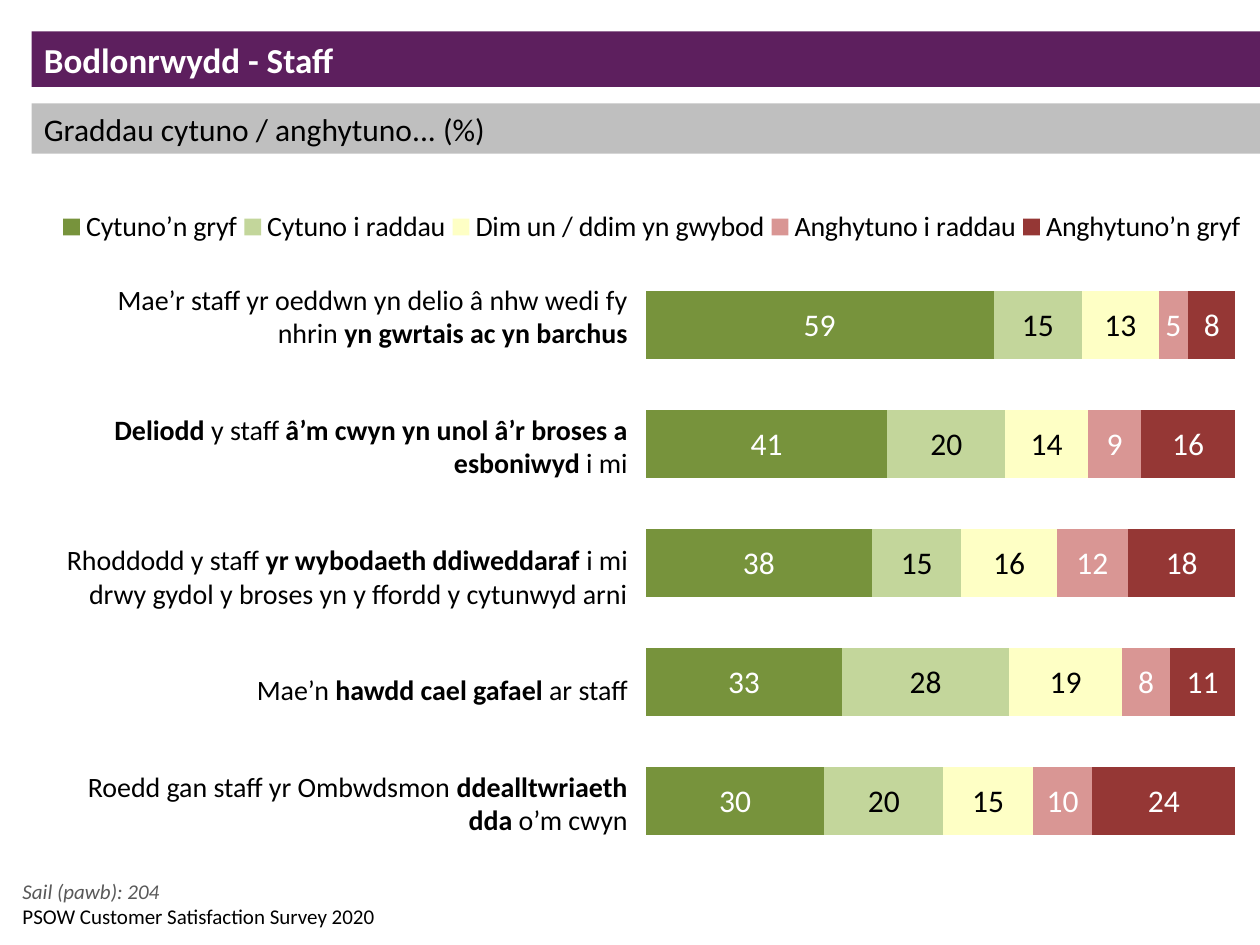
import pptx
import pptx.chart.data
import pptx.dml.color
import pptx.enum.chart
import pptx.enum.shapes
import pptx.enum.text
import pptx.oxml
import pptx.oxml.ns
import pptx.util

Inches, Pt = pptx.util.Inches, pptx.util.Pt
FONT = "Calibri"
COLORS = {
    "purple": "5D1F5E", "silver": "BFBFBF", "white": "FFFFFF", "black": "000000",
    "gray": "595959", "green": "77933C", "pale_green": "C3D69B",
    "cream": "FEFFC5", "pink": "D99694", "red": "953735",
}

# Content: banners as text, top, height, fill, size, colour, bold
BANNERS = [
    ("Bodlonrwydd - Staff", 0.25, 0.44, "purple", 20, "white", True),
    ("Graddau cytuno / anghytuno... (%)", 0.82, 0.4, "silver", 18, "black", False),
]
# Answers as name, values, bar colour, label colour
SERIES = [
    ("Cytuno’n gryf", (59, 41, 38, 33, 30), "green", "white"),
    ("Cytuno i raddau", (15, 20, 15, 28, 20), "pale_green", "black"),
    ("Dim un / ddim yn gwybod", (13, 14, 16, 19, 15), "cream", "black"),
    ("Anghytuno i raddau", (5, 9, 12, 8, 10), "pink", "white"),
    ("Anghytuno’n gryf", (8, 16, 18, 11, 24), "red", "white"),
]
# Statements, with bold parts between asterisks
STATEMENTS = [
    "Mae’r staff yr oeddwn yn delio â nhw wedi fy nhrin *yn gwrtais ac yn barchus*",
    "*Deliodd* y staff* â’m cwyn yn unol â’r broses a esboniwyd* i mi",
    "Rhoddodd y staff* yr wybodaeth ddiweddaraf *i mi drwy gydol y broses yn y ffordd y cytunwyd arni",
    "Mae’n *hawdd cael gafael *ar staff",
    "Roedd gan staff yr Ombwdsmon *ddealltwriaeth dda* o’m cwyn",
]
# Footers as text, top, width, colour, italic
FOOTERS = [
    ("Sail (pawb): 204", 6.92, 7.25, "gray", True),
    ("PSOW Customer Satisfaction Survey 2020", 7.12, 5.25, "black", False),
]


def rgb(name):
    return pptx.dml.color.RGBColor.from_string(COLORS[name])


def style(font, size, color, bold=False, italic=False):
    font.name, font.size = FONT, Pt(size)
    font.bold, font.italic = bold, italic
    font.color.rgb = rgb(color)


def add_text_box(slide, left, top, width, height):
    tf = slide.shapes.add_textbox(*map(Inches, (left, top, width, height))).text_frame
    tf.word_wrap = True
    return tf


def set_layout(parent, index, x, y, w, h, inner=False):
    """Place a chart part by fractions of the chart area."""
    for old in parent.findall(pptx.oxml.ns.qn("c:layout")):
        parent.remove(old)
    target = '<c:layoutTarget val="inner"/>' if inner else ""
    sizes = "".join(f'<c:{k} val="{v}"/>' for k, v in zip("xywh", (x, y, w, h)))
    parent.insert(index, pptx.oxml.parse_xml(
        f'<c:layout {pptx.oxml.ns.nsdecls("c")}><c:manualLayout>{target}'
        f'<c:xMode val="edge"/><c:yMode val="edge"/>{sizes}</c:manualLayout></c:layout>'))


def add_banner(slide, text, top, height, fill, size, color, bold):
    s = slide.shapes.add_shape(pptx.enum.shapes.MSO_SHAPE.RECTANGLE, Inches(0.25),
                               Inches(top), Inches(9.75), Inches(height))
    s.shadow.inherit = False
    s.fill.solid()
    s.fill.fore_color.rgb = rgb(fill)
    s.line.fill.background()
    tf = s.text_frame
    tf.text = text
    tf.vertical_anchor = pptx.enum.text.MSO_ANCHOR.MIDDLE
    p = tf.paragraphs[0]
    p.alignment = pptx.enum.text.PP_ALIGN.LEFT
    style(p.runs[0].font, size, color, bold)


def add_answer_chart(slide):
    data = pptx.chart.data.CategoryChartData()
    data.categories = [str(i + 1) for i in range(len(STATEMENTS))]
    for name, values, *_ in SERIES:
        data.add_series(name, values)
    chart = slide.shapes.add_chart(
        pptx.enum.chart.XL_CHART_TYPE.BAR_STACKED_100, Inches(0.25), Inches(1.44),
        Inches(9.75), Inches(5.56), data).chart
    style(chart.font, 18, "black")
    chart.has_title = False

    # Axes
    for axis in (chart.category_axis, chart.value_axis):
        axis.visible = False
        axis.has_major_gridlines = False
    chart.category_axis.reverse_order = True

    # Bars and labels
    plot = chart.plots[0]
    plot.gap_width, plot.overlap = 75, 100
    plot.vary_by_categories = False
    for series, (_, _, fill, color) in zip(plot.series, SERIES):
        series.format.fill.solid()
        series.format.fill.fore_color.rgb = rgb(fill)
        labels = series.data_labels
        labels.show_value = True
        style(labels.font, 18, color)

    # Legend above the bars
    chart.has_legend = True
    legend = chart.legend
    legend.position = pptx.enum.chart.XL_LEGEND_POSITION.TOP
    legend.include_in_layout = False
    style(legend.font, 16, "black")
    set_layout(legend._element, 1, 0.02, 0.03, 0.97, 0.07)
    set_layout(chart._chartSpace.chart.plotArea, 0, 0.5, 0.12, 0.48, 0.85, inner=True)


def add_statements(slide):
    tf = add_text_box(slide, 0.33, 2.19, 4.75, 4.54)
    for i, statement in enumerate(STATEMENTS):
        p = tf.add_paragraph() if i else tf.paragraphs[0]
        p.alignment = pptx.enum.text.PP_ALIGN.RIGHT
        if i:
            p.space_before = Pt(36)
        for j, part in enumerate(statement.split("*")):
            if part:
                r = p.add_run()
                r.text = part
                style(r.font, 16, "black", bold=j % 2 == 1)


def main():
    prs = pptx.Presentation()
    prs.slide_width, prs.slide_height = Inches(10), Inches(7.5)
    slide = prs.slides.add_slide(prs.slide_layouts[6])
    for banner in BANNERS:
        add_banner(slide, *banner)
    add_answer_chart(slide)
    add_statements(slide)
    for text, top, width, color, italic in FOOTERS:
        tf = add_text_box(slide, 0.08, top, width, 0.3)
        tf.text = text
        style(tf.paragraphs[0].runs[0].font, 12, color, italic=italic)
    prs.save("out.pptx")


if __name__ == "__main__":
    main()
